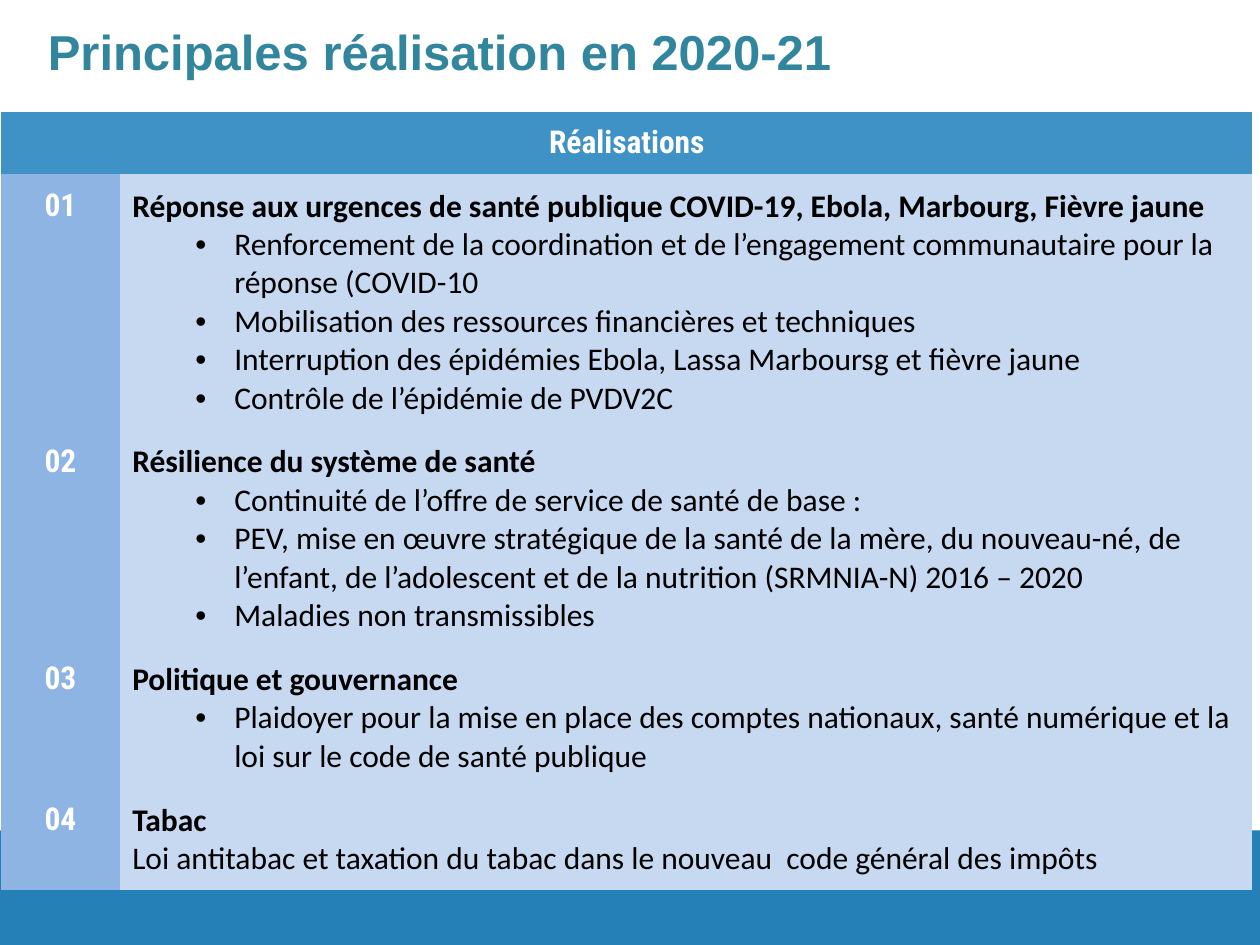
from dataclasses import dataclass

from lxml import etree
from pptx import Presentation
from pptx.dml.color import RGBColor
from pptx.enum.shapes import MSO_SHAPE
from pptx.enum.text import MSO_ANCHOR, PP_ALIGN
from pptx.oxml.ns import qn
from pptx.util import Pt

EMU_PER_PX = 9144  # 100 px to the inch
RECTANGLE = MSO_SHAPE.RECTANGLE
TOP, MIDDLE = MSO_ANCHOR.TOP, MSO_ANCHOR.MIDDLE
LEFT, CENTER = PP_ALIGN.LEFT, PP_ALIGN.CENTER
NO_GRID_STYLE = "{2D5ABB26-0587-4C30-8999-92F81FD0307C}"
COLORS = {
    "band": "2680B8",
    "title": "31859C",
    "header": "3E92C6",
    "number": "8EB4E3",
    "body": "C6D9F1",
    "white": "FFFFFF",
    "black": "000000",
}
COLUMN_WIDTHS = (94, 899)
HEADER_HEIGHT = 49


@dataclass
class Achievement:
    heading: str
    details: list[str]
    height: int
    bulleted: bool = True


ACHIEVEMENTS = [
    Achievement(
        "Réponse aux urgences de santé publique COVID-19, Ebola, Marbourg, Fièvre jaune",
        [
            "Renforcement de la coordination et de l’engagement communautaire "
            "pour la réponse (COVID-10",
            "Mobilisation des ressources financières et techniques",
            "Interruption des épidémies Ebola, Lassa Marboursg et fièvre jaune",
            "Contrôle de l’épidémie de PVDV2C",
        ],
        195,
    ),
    Achievement(
        "Résilience du système de santé",
        [
            "Continuité de l’offre de service de santé de base :",
            "PEV, mise en œuvre stratégique de la santé de la mère, du nouveau-né, de "
            "l’enfant, de l’adolescent et de la nutrition (SRMNIA-N) 2016 – 2020",
            "Maladies non transmissibles",
        ],
        166,
    ),
    Achievement(
        "Politique et gouvernance",
        [
            "Plaidoyer pour la mise en place des comptes nationaux, santé numérique "
            "et la loi sur le code de santé publique",
        ],
        95,
    ),
    Achievement(
        "Tabac",
        ["Loi antitabac et taxation du tabac dans le nouveau  code général des impôts"],
        70,
        bulleted=False,
    ),
]


def px(length: int) -> int:
    return length * EMU_PER_PX


def color(name: str) -> RGBColor:
    return RGBColor.from_string(COLORS[name])


def place(shape, left: int, top: int, width: int, height: int) -> None:
    shape.left, shape.top = px(left), px(top)
    shape.width, shape.height = px(width), px(height)


def set_margins(target, horizontal: int, vertical: int) -> None:
    target.margin_left = target.margin_right = px(horizontal)
    target.margin_top = target.margin_bottom = px(vertical)


def add_run(paragraph, text: str, font_name: str, color_name: str,
            size: int = 18, bold: bool = True) -> None:
    run = paragraph.add_run()
    run.text = text
    run.font.name = font_name
    run.font.size = Pt(size)
    run.font.bold = bold
    run.font.color.rgb = color(color_name)


def add_bullet(paragraph) -> None:
    paragraph.level = 1
    properties = paragraph._p.get_or_add_pPr()
    properties.set("marL", str(px(81)))
    properties.set("indent", str(px(-31)))
    etree.SubElement(properties, qn("a:buFont"), typeface="Arial")
    etree.SubElement(properties, qn("a:buChar"), char="•")


def format_cell(cell, fill: str, anchor) -> None:
    cell.fill.solid()
    cell.fill.fore_color.rgb = color(fill)
    cell.vertical_anchor = anchor
    set_margins(cell, 10, 10)


def fill_label(cell, text: str, fill: str, anchor) -> None:
    format_cell(cell, fill, anchor)
    paragraph = cell.text_frame.paragraphs[0]
    paragraph.alignment = CENTER
    add_run(paragraph, text, "Roboto Condensed", "white")


def fill_achievement(cell, achievement: Achievement) -> None:
    format_cell(cell, "body", MIDDLE)
    text_frame = cell.text_frame
    add_run(text_frame.paragraphs[0], achievement.heading, "Calibri", "black")
    for detail in achievement.details:
        paragraph = text_frame.add_paragraph()
        if achievement.bulleted:
            add_bullet(paragraph)
        add_run(paragraph, detail, "Calibri", "black", bold=False)


def add_title(slide) -> None:
    title = slide.shapes.title
    place(title, 31, 4, 900, 125)
    text_frame = title.text_frame
    text_frame.word_wrap = True
    text_frame.vertical_anchor = TOP
    set_margins(text_frame, 7, 4)
    paragraph = text_frame.paragraphs[0]
    paragraph.alignment = LEFT
    paragraph.line_spacing = 1.2
    add_run(paragraph, "Principales réalisation en 2020-21", "Arial", "title", size=28)


def add_bottom_band(slide) -> None:
    band = slide.shapes.add_shape(RECTANGLE, 0, px(659), px(1000), px(91))
    band.shadow.inherit = False
    band.fill.solid()
    band.fill.fore_color.rgb = color("band")
    band.line.fill.background()


def add_achievements_table(slide) -> None:
    heights = [HEADER_HEIGHT] + [achievement.height for achievement in ACHIEVEMENTS]
    frame = slide.shapes.add_table(
        len(heights), len(COLUMN_WIDTHS),
        px(1), px(89), px(sum(COLUMN_WIDTHS)), px(sum(heights)),
    )
    for style in frame.element.iter(qn("a:tableStyleId")):
        style.text = NO_GRID_STYLE
    table = frame.table
    for column, width in zip(table.columns, COLUMN_WIDTHS):
        column.width = px(width)
    for row, height in zip(table.rows, heights):
        row.height = px(height)

    header = table.cell(0, 0)
    header.merge(table.cell(0, 1))
    fill_label(header, "Réalisations", "header", MIDDLE)
    for number, achievement in enumerate(ACHIEVEMENTS, start=1):
        fill_label(table.cell(number, 0), f"{number:02d}", "number", TOP)
        fill_achievement(table.cell(number, 1), achievement)


def main() -> None:
    presentation = Presentation()
    presentation.slide_width, presentation.slide_height = px(1000), px(750)
    slide = presentation.slides.add_slide(presentation.slide_layouts[5])
    add_bottom_band(slide)
    add_title(slide)
    add_achievements_table(slide)
    presentation.save("out.pptx")


if __name__ == "__main__":
    main()
